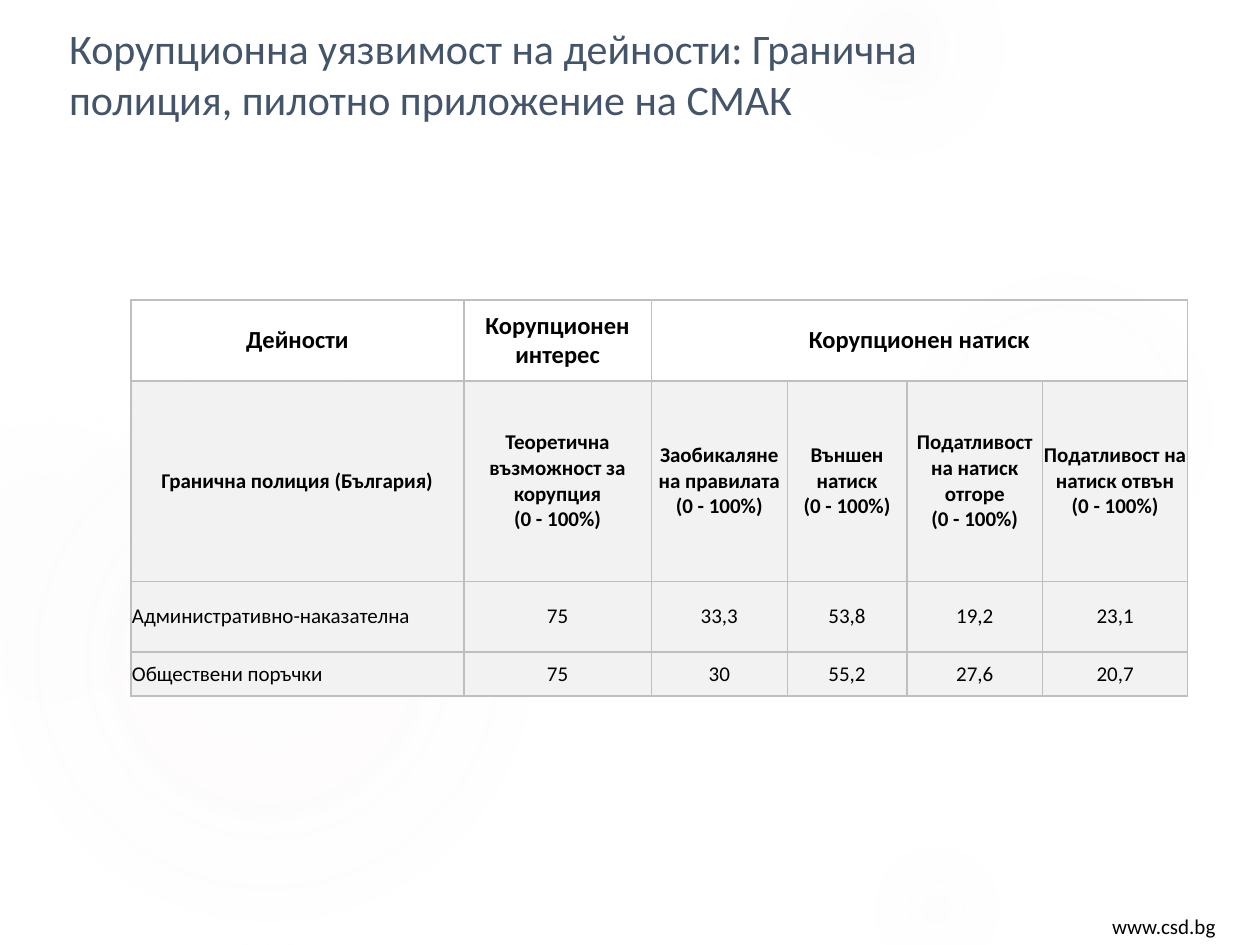
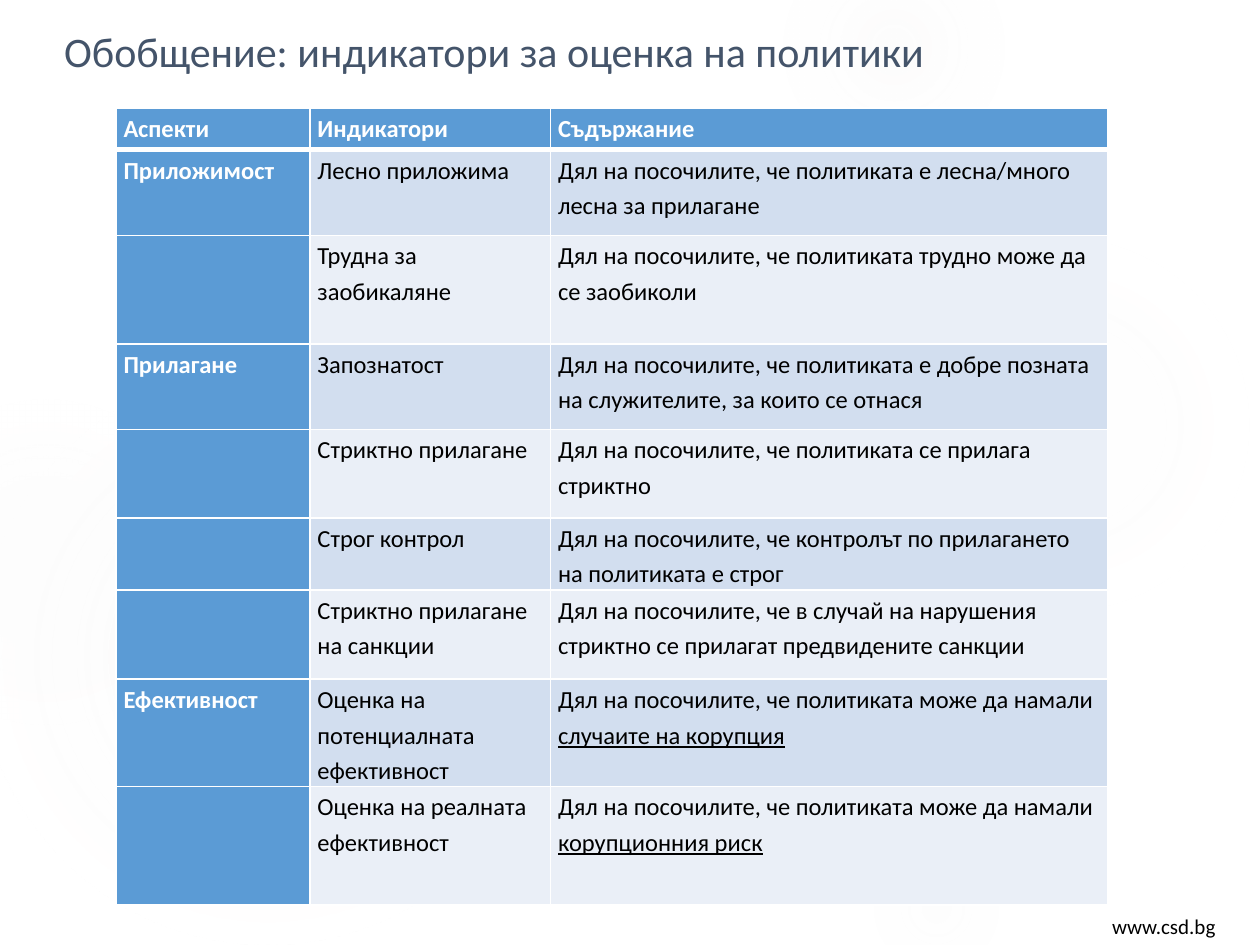
"""Build two slides on corruption vulnerability and policy indicators."""

from dataclasses import dataclass
from typing import NamedTuple

import pptx
import pptx.dml.color
import pptx.enum.shapes
import pptx.enum.text
import pptx.oxml
import pptx.oxml.ns
import pptx.presentation
import pptx.shapes.base
import pptx.slide
import pptx.table
import pptx.text.text
import pptx.util

Cm = pptx.util.Cm
Align = pptx.enum.text.PP_ALIGN
Anchor = pptx.enum.text.MSO_ANCHOR


@dataclass(frozen=True)
class Theme:
    """Colours, font and type sizes."""

    font: str = "Calibri"
    title: str = "44546A"
    ink: str = "000000"
    white: str = "FFFFFF"
    halo: str = "F1F0F0"
    rule: str = "BFBFBF"
    pale: str = "F2F2F2"
    accent: str = "5B9BD5"
    band_dark: str = "D2DEEF"
    band_light: str = "EAEFF7"
    title_size: int = 24
    large: int = 14
    small: int = 12


THEME = Theme()


class Frame(NamedTuple):
    """Position and size in centimetres."""

    left: float
    top: float
    width: float
    height: float


class Halo(NamedTuple):
    """A faint background circle with (position, opacity) stops in percent."""

    left: float
    top: float
    diameter: float
    stops: tuple[tuple[int, int], ...]


class Style(NamedTuple):
    """Look of a text run."""

    size: int
    colour: str = THEME.ink
    bold: bool = False
    underline: bool = False


class CellLook(NamedTuple):
    """Look of a table cell."""

    style: Style
    fill: str | None = None
    align: Align = Align.LEFT
    anchor: Anchor = Anchor.TOP
    inset: float = 0.15
    spacing: float = 1.0


class Indicator(NamedTuple):
    """One policy indicator."""

    aspect: str
    name: str
    content: str
    stressed: str = ""


HALOS = (
    Halo(17.5, 4.65, 7.82, ((0, 7), (36, 6), (69, 0))),
    Halo(15.8, -1.27, 4.45, ((0, 14), (36, 7), (73, 0))),
    Halo(17.5, 16.94, 2.74, ((0, 9), (36, 5), (66, 0))),
    Halo(-0.43, 7.42, 11.63, ((0, 11), (36, 10), (75, 0))),
    Halo(-2.34, 8.05, 6.55, ((0, 8), (36, 8), (72, 0))),
)
FOOTER = Frame(22.17, 18.29, 3.23, 0.76)

ACTIVITY_ROWS = (
    ("Дейности", "Корупционен интерес", "Корупционен натиск", "", "", ""),
    (
        "Гранична полиция (България)",
        "Теоретична възможност за корупция\n(0 - 100%)",
        "Заобикаляне на правилата\n(0 - 100%)",
        "Външен натиск\n(0 - 100%)",
        "Податливост на натиск отгоре\n(0 - 100%)",
        "Податливост на натиск отвън\n(0 - 100%)",
    ),
    ("Административно-наказателна", "75", "33,3", "53,8", "19,2", "23,1"),
    ("Обществени поръчки", "75", "30", "55,2", "27,6", "20,7"),
)

INDICATOR_HEADS = ("Аспекти", "Индикатори", "Съдържание")
SHARE = "Дял на посочилите, че "
INDICATORS = (
    Indicator("Приложимост", "Лесно приложима", "политиката е лесна/много лесна за прилагане"),
    Indicator("", "Трудна за заобикаляне", "политиката трудно може да се заобиколи"),
    Indicator(
        "Прилагане",
        "Запознатост",
        "политиката е добре позната на служителите, за които се отнася",
    ),
    Indicator("", "Стриктно прилагане", "политиката се прилага стриктно"),
    Indicator("", "Строг контрол", "контролът по прилагането на политиката е строг"),
    Indicator(
        "",
        "Стриктно прилагане на санкции",
        "в случай на нарушения стриктно се прилагат предвидените санкции",
    ),
    Indicator(
        "Ефективност",
        "Оценка на потенциалната ефективност",
        "политиката може да намали ",
        "случаите на корупция",
    ),
    Indicator(
        "",
        "Оценка на реалната ефективност",
        "политиката може да намали ",
        "корупционния риск",
    ),
)


def rgb(colour: str) -> pptx.dml.color.RGBColor:
    """Turn a hex string into a colour."""
    return pptx.dml.color.RGBColor.from_string(colour)


def add_text(para: pptx.text.text._Paragraph, text: str, style: Style) -> None:
    """Add styled runs, one for each line of the text."""
    for number, line in enumerate(text.split("\n")):
        if number:
            para.add_line_break()
        span = para.add_run()
        span.text = line
        span.font.name = THEME.font
        span.font.size = pptx.util.Pt(style.size)
        span.font.bold = style.bold
        span.font.underline = style.underline
        span.font.color.rgb = rgb(style.colour)


def add_halo(page: pptx.slide.Slide, halo: Halo) -> pptx.shapes.base.BaseShape:
    """Draw a circle with a fading radial fill."""
    size = Cm(halo.diameter)
    oval = pptx.enum.shapes.MSO_SHAPE.OVAL
    shape = page.shapes.add_shape(oval, Cm(halo.left), Cm(halo.top), size, size)
    shape.shadow.inherit = False
    shape.line.fill.background()
    stops = "".join(
        f'<a:gs pos="{position * 1000}"><a:srgbClr val="{THEME.halo}">'
        f'<a:alpha val="{opacity * 1000}"/></a:srgbClr></a:gs>'
        for position, opacity in halo.stops
    )
    gradient = pptx.oxml.parse_xml(
        f'<a:gradFill {pptx.oxml.ns.nsdecls("a")} rotWithShape="1"><a:gsLst>{stops}</a:gsLst>'
        '<a:path path="circle"><a:fillToRect l="50000" t="50000" r="50000" b="50000"/>'
        "</a:path></a:gradFill>"
    )
    shape.element.spPr.find(pptx.oxml.ns.qn("a:prstGeom")).addnext(gradient)
    return shape


def add_footer(page: pptx.slide.Slide) -> pptx.shapes.base.BaseShape:
    """Draw the web address."""
    box = page.shapes.add_textbox(*map(Cm, FOOTER))
    box.text_frame.word_wrap = True
    add_text(box.text_frame.paragraphs[0], "www.csd.bg", Style(THEME.small))
    return box


def furnish_master(deck: pptx.presentation.Presentation, page: pptx.slide.Slide) -> None:
    """Draw the shared background and move it to the slide master."""
    shared = [add_halo(page, halo) for halo in HALOS] + [add_footer(page)]
    tree = deck.slide_master.shapes.element
    for number, shape in enumerate(shared):
        shape.element.xpath("./p:nvSpPr/p:cNvPr")[0].set("id", str(100 + number))
        tree.insert(2 + number, shape.element)


def set_title(page: pptx.slide.Slide, text: str, frame: Frame) -> None:
    """Fill and place the title placeholder."""
    title = page.shapes.title
    title.left, title.top, title.width, title.height = map(Cm, frame)
    title.text_frame.auto_size = pptx.enum.text.MSO_AUTO_SIZE.NONE
    title.text_frame.vertical_anchor = Anchor.TOP
    para = title.text_frame.paragraphs[0]
    para.alignment = Align.LEFT
    add_text(para, text, Style(THEME.title_size, THEME.title))


def add_grid(
    page: pptx.slide.Slide,
    left: float,
    top: float,
    widths: tuple[float, ...],
    heights: tuple[float, ...],
) -> pptx.table.Table:
    """Add a plain table with the given column widths and row heights."""
    frame = page.shapes.add_table(
        len(heights), len(widths), Cm(left), Cm(top), Cm(sum(widths)), Cm(sum(heights))
    )
    table = frame.table
    table.first_row = table.horz_banding = False
    for column, width in zip(table.columns, widths):
        column.width = Cm(width)
    for row, height in zip(table.rows, heights):
        row.height = Cm(height)
    return table


def set_borders(cell: pptx.table._Cell, colour: str, top: float = 1, bottom: float = 1) -> None:
    """Draw the four borders of a cell, widths in points."""
    properties = cell._tc.get_or_add_tcPr()
    for side, width in (("L", 1), ("R", 1), ("T", top), ("B", bottom)):
        properties.append(pptx.oxml.parse_xml(
            f'<a:ln{side} {pptx.oxml.ns.nsdecls("a")} w="{pptx.util.Pt(width)}"><a:solidFill>'
            f'<a:srgbClr val="{colour}"/></a:solidFill></a:ln{side}>'
        ))


def fill_cell(cell: pptx.table._Cell, text: str, look: CellLook, stressed: str = "") -> None:
    """Fill a cell with text, the stressed part underlined."""
    cell.margin_left = cell.margin_right = Cm(look.inset)
    cell.margin_top = cell.margin_bottom = 0
    cell.vertical_anchor = look.anchor
    if look.fill:
        cell.fill.solid()
        cell.fill.fore_color.rgb = rgb(look.fill)
    else:
        cell.fill.background()
    para = cell.text_frame.paragraphs[0]
    para.alignment = look.align
    para.line_spacing = look.spacing
    if text:
        add_text(para, text, look.style)
    if stressed:
        add_text(para, stressed, look.style._replace(underline=True))


def build_activities(page: pptx.slide.Slide) -> None:
    """Build the slide on vulnerable activities."""
    set_title(
        page,
        "Корупционна уязвимост на дейности: Гранична полиция, пилотно приложение на СМАК",
        Frame(1.14, 0.33, 20.98, 2.62),
    )
    table = add_grid(
        page, 2.64, 6.05, (6.71, 3.78, 2.74, 2.41, 2.74, 2.92), (1.63, 4.04, 1.42, 0.89)
    )
    table.cell(0, 2).merge(table.cell(0, 5))
    for row, texts in enumerate(ACTIVITY_ROWS):
        for column, text in enumerate(texts):
            look = CellLook(
                Style(THEME.small if row else THEME.large, bold=row < 2),
                THEME.pale if row else None,
                Align.LEFT if row > 1 and column == 0 else Align.CENTER,
                Anchor.MIDDLE,
                0.02,
            )
            set_borders(table.cell(row, column), THEME.rule)
            fill_cell(table.cell(row, column), text, look)


def build_indicators(page: pptx.slide.Slide) -> None:
    """Build the slide that sums up the policy indicators."""
    set_title(
        page, "Обобщение: индикатори за оценка на политики", Frame(1.04, 0.38, 19.61, 1.55)
    )
    heights = (0.84, 1.73, 2.18, 1.73, 1.78, 1.45, 1.8, 2.16, 2.39)
    table = add_grid(page, 2.34, 2.18, (3.91, 4.85, 11.23), heights)
    head = CellLook(Style(THEME.large, THEME.white, True), THEME.accent, spacing=1.2)
    for column, text in enumerate(INDICATOR_HEADS):
        set_borders(table.cell(0, column), THEME.white, bottom=3)
        fill_cell(table.cell(0, column), text, head)
    for row, item in enumerate(INDICATORS, start=1):
        band = THEME.band_dark if row % 2 else THEME.band_light
        body = head._replace(style=Style(THEME.large), fill=band)
        for column in range(3):
            set_borders(table.cell(row, column), THEME.white, top=3 if row == 1 else 1)
        fill_cell(table.cell(row, 0), item.aspect, head)
        fill_cell(table.cell(row, 1), item.name, body)
        fill_cell(table.cell(row, 2), SHARE + item.content, body, item.stressed)


def main() -> None:
    """Build and save the deck."""
    deck = pptx.Presentation()
    deck.slide_width, deck.slide_height = Cm(25.4), Cm(19.05)
    title_only = deck.slide_layouts[5]
    pages = [deck.slides.add_slide(title_only) for _ in range(2)]
    furnish_master(deck, pages[0])
    build_activities(pages[0])
    build_indicators(pages[1])
    deck.save("out.pptx")


if __name__ == "__main__":
    main()
